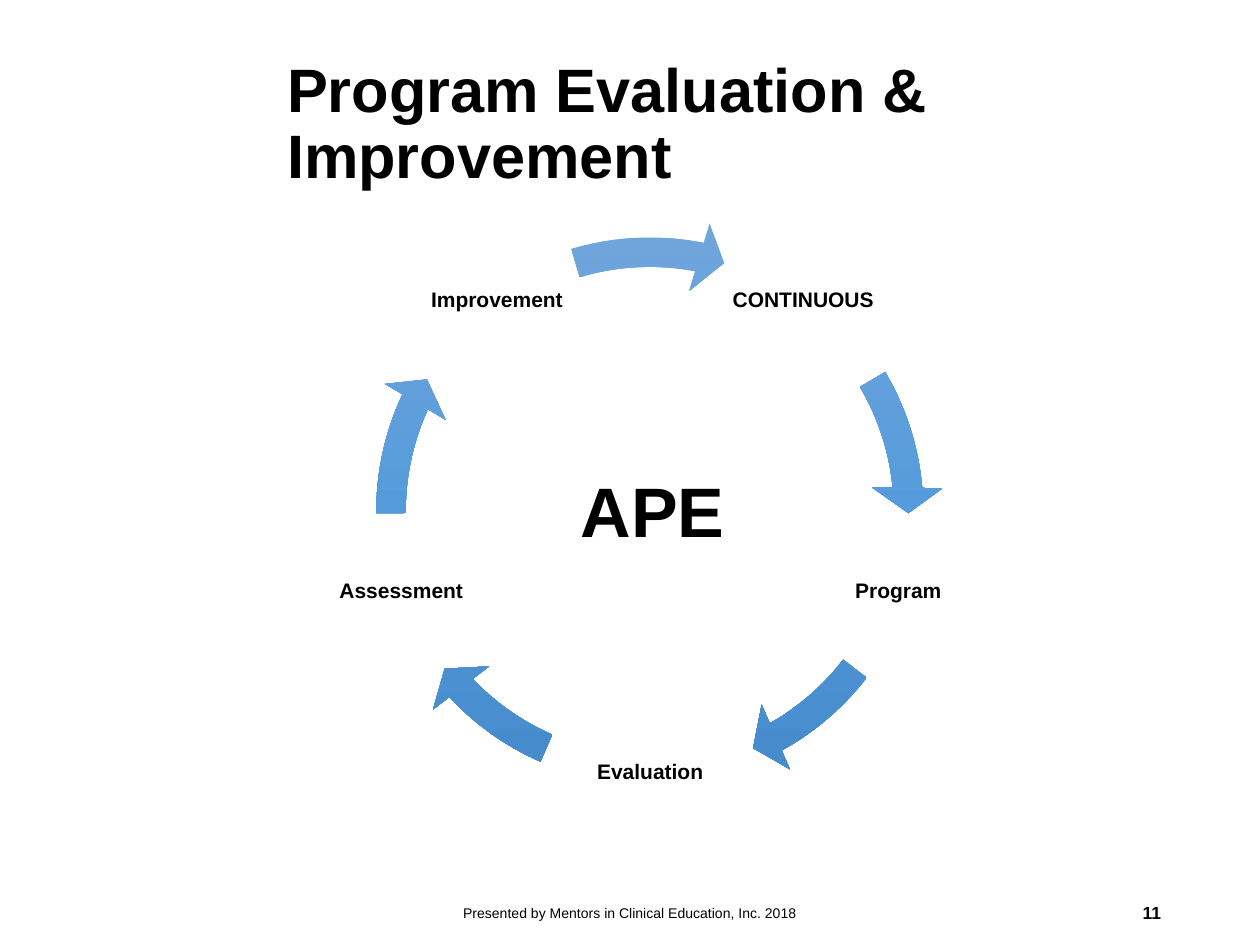
from copy import deepcopy

from pptx import Presentation
from pptx.dml.color import RGBColor
from pptx.enum.shapes import MSO_SHAPE as Shape
from pptx.enum.text import MSO_ANCHOR as Anchor, MSO_AUTO_SIZE as AutoSize, PP_ALIGN as Align
from pptx.oxml.ns import qn
from pptx.util import Pt

FONT = "Arial"
BLACK = "000000"
GRADIENT = [(0, "71A6DB"), (0.5, "559BDB"), (1, "448ACA")]

STEPS = [
    ("CONTINUOUS", (414, 126.7, 90, 90), 212.93, 197.67),
    ("Program", (410.4, 293, 205.9, 90), 36.51, 22.54),
    ("Evaluation", (311.8, 396.7, 119.5, 90), 82.1, 68.13),
    ("Assessment", (130.3, 293, 198, 90), 122.97, 107.71),
    ("Improvement", (239, 126.7, 90, 90), 168.65, 151.99),
]


def color(value):
    return RGBColor.from_string(value)


def add_text(slide, box, text, size, bold=False, align=Align.LEFT,
             anchor=Anchor.MIDDLE, spacing=None, inset=None, wrap=True):
    shape = slide.shapes.add_textbox(*map(Pt, box))
    frame = shape.text_frame
    frame.word_wrap = wrap
    frame.vertical_anchor = anchor
    if inset is not None:
        frame.margin_left = frame.margin_right = Pt(inset)
        frame.margin_top = frame.margin_bottom = Pt(inset)
    paragraph = frame.paragraphs[0]
    paragraph.alignment = align
    if spacing:
        paragraph.line_spacing = spacing
    run = paragraph.add_run()
    run.text = text
    run.font.name = FONT
    run.font.size = Pt(size)
    run.font.bold = bold
    run.font.color.rgb = color(BLACK)
    return shape


def fill_gradient(shape):
    shape.fill.gradient()
    shape.fill.gradient_angle = 270
    stop_list = shape._element.spPr.find(qn("a:gradFill")).find(qn("a:gsLst"))
    stop_list.append(deepcopy(stop_list[0]))
    for stop, (position, value) in zip(shape.fill.gradient_stops, GRADIENT):
        stop.position = position
        stop.color.rgb = color(value)


def add_arrow(slide, box, end, start):
    shape = slide.shapes.add_shape(Shape.CIRCULAR_ARROW, *map(Pt, box))
    for index, value in enumerate((0.05, 3.36, end, start, 0.06)):
        shape.adjustments[index] = value
    shape.shadow.inherit = False
    shape.line.fill.background()
    fill_gradient(shape)


def add_cycle(slide, box):
    for label, label_box, end, start in STEPS:
        add_text(slide, label_box, label, 12, True, Align.CENTER, spacing=0.9, inset=1.2)
        add_arrow(slide, box, end, start)


def add_center(slide, box):
    shape = add_text(slide, box, "APE", 40, True, anchor=Anchor.TOP, wrap=False)
    shape.text_frame.auto_size = AutoSize.SHAPE_TO_FIT_TEXT


def add_title(slide, box):
    add_text(slide, box, "Program Evaluation & Improvement", 35, True, spacing=0.9)


def add_footer(slide, box):
    left, top, width, height = box
    credit_width, number_width = 243, 162
    add_text(slide, (left, top, credit_width, height),
             "Presented by Mentors in Clinical Education, Inc. 2018", 8, align=Align.CENTER)
    add_text(slide, (left + width - number_width, top, number_width, height),
             "11", 10, True, Align.RIGHT)


def main():
    presentation = Presentation()
    presentation.slide_width = Pt(720)
    presentation.slide_height = Pt(540)
    slide = presentation.slides.add_slide(presentation.slide_layouts[6])
    add_cycle(slide, (203.3, 124, 336, 336))
    add_title(slide, (157, 19.4, 514, 104.4))
    add_footer(slide, (238.5, 507, 432, 28.8))
    add_center(slide, (324.7, 263.5, 97.2, 55.4))
    presentation.save("out.pptx")


if __name__ == "__main__":
    main()
